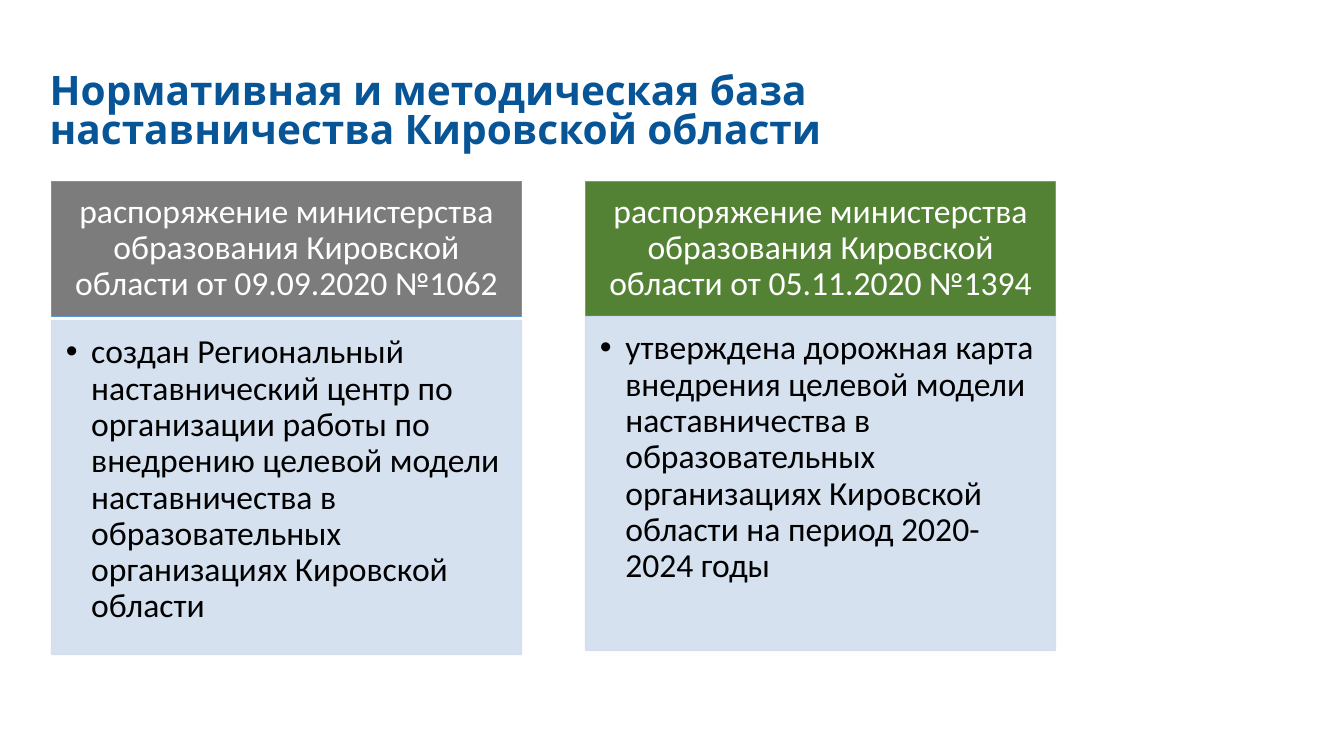
from pptx import Presentation
from pptx.dml.color import RGBColor
from pptx.enum.shapes import MSO_SHAPE as Shape
from pptx.enum.text import MSO_ANCHOR as Anchor, PP_ALIGN as Align
from pptx.oxml.ns import qn
from pptx.util import Cm, Pt
from lxml.etree import SubElement

COLORS = {
    "title": "075597",
    "gray": "7C7C7C",
    "green": "548235",
    "outline": "5B9BD5",
    "panel": "D2DEEF",
    "white": "FFFFFF",
    "black": "000000",
}


class SlideBuilder:
    title_font = "Karla"
    body_font = "Calibri"
    body_size = 24

    def __init__(self, page):
        self.page = page

    def color(self, name):
        return RGBColor.from_string(COLORS[name])

    def add_span(self, para, text, font, size, color, bold=False):
        span = para.add_run()
        span.text = text
        span.font.name = font
        span.font.size = Pt(size)
        span.font.bold = bold
        span.font.color.rgb = self.color(color)

    def frame(self, box, margins, anchor):
        frame = box.text_frame
        frame.word_wrap = True
        frame.vertical_anchor = anchor
        (frame.margin_left, frame.margin_top,
         frame.margin_right, frame.margin_bottom) = map(Cm, margins)
        return frame.paragraphs[0]

    def title(self, lines, left, top, width, height):
        box = self.page.shapes.add_textbox(Cm(left), Cm(top), Cm(width), Cm(height))
        para = self.frame(box, (0.25, 0.13, 0.25, 0.13), Anchor.MIDDLE)
        para.line_spacing = 0.8
        for index, line in enumerate(lines):
            if index:
                para.add_line_break()
            self.add_span(para, line, self.title_font, 29, "title", bold=True)

    def rectangle(self, left, top, width, height, fill, outline):
        box = self.page.shapes.add_shape(
            Shape.RECTANGLE, Cm(left), Cm(top), Cm(width), Cm(height))
        box.shadow.inherit = False
        box.fill.solid()
        box.fill.fore_color.rgb = self.color(fill)
        box.line.color.rgb = self.color(outline)
        box.line.width = Pt(1)
        return box

    def header(self, text, left, top, width, height, fill):
        box = self.rectangle(left, top, width, height, fill, "outline")
        para = self.frame(box, (0.48, 0.28, 0.48, 0.28), Anchor.MIDDLE)
        para.alignment = Align.CENTER
        para.line_spacing = 0.9
        self.add_span(para, text, self.body_font, self.body_size, "white")

    def panel(self, text, left, top, width, height):
        box = self.rectangle(left, top, width, height, "panel", "panel")
        # Fill and outline are 90 % opaque
        for tint in box._element.spPr.iter(qn("a:srgbClr")):
            SubElement(tint, qn("a:alpha"), val="90000")
        para = self.frame(box, (0.36, 0.36, 0.48, 0.53), Anchor.TOP)
        props = para._p.get_or_add_pPr()
        props.set("marL", str(Cm(0.64)))
        props.set("indent", str(Cm(-0.64)))
        SubElement(props, qn("a:buFont"), typeface="Arial")
        SubElement(props, qn("a:buChar"), char="•")
        para.alignment = Align.LEFT
        para.line_spacing = 0.9
        self.add_span(para, text, self.body_font, self.body_size, "black")


def main():
    deck = Presentation()
    deck.slide_width, deck.slide_height = Cm(33.87), Cm(19.05)
    builder = SlideBuilder(deck.slides.add_slide(deck.slide_layouts[6]))

    # Title
    builder.title(["Нормативная и методическая база",
                   "наставничества Кировской области"], 1, 0.36, 28.17, 5)

    # Two columns: header colour, order number, panel top, panel text
    columns = [
        ("gray", "09.09.2020 №1062", 8.08,
         "создан Региональный наставнический центр по организации работы "
         "по внедрению целевой модели наставничества в образовательных "
         "организациях Кировской области"),
        ("green", "05.11.2020 №1394", 7.98,
         "утверждена дорожная карта внедрения целевой модели наставничества "
         "в образовательных организациях Кировской области на период "
         "2020-2024 годы"),
    ]
    width, pitch = 11.84, 13.46
    for index, (fill, order, panel_top, text) in enumerate(columns):
        left = 1.3 + index * pitch
        builder.header("распоряжение министерства образования Кировской "
                       f"области от {order}", left, 4.57, width, 3.4, fill)
        builder.panel(text, left, panel_top, width, 8.41)

    deck.save("out.pptx")


if __name__ == "__main__":
    main()
